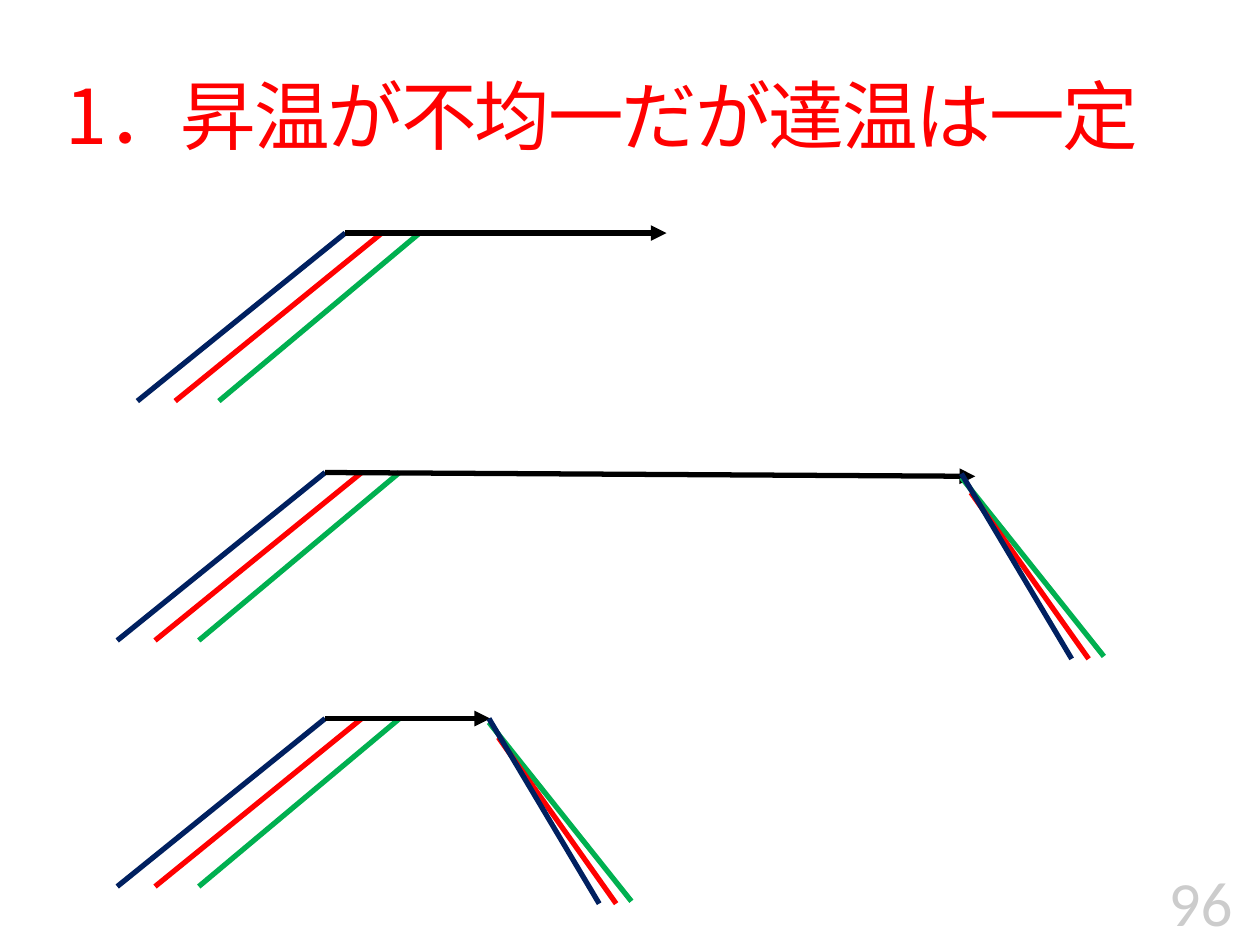
from dataclasses import dataclass

from lxml.etree import SubElement
from pptx import Presentation
from pptx.dml.color import RGBColor as Color
from pptx.enum.shapes import MSO_CONNECTOR as Connector
from pptx.enum.text import MSO_ANCHOR as Anchor, PP_ALIGN as Align
from pptx.oxml.ns import qn
from pptx.util import Pt


@dataclass(frozen=True)
class Theme:
    navy: Color = Color(0x00, 0x20, 0x60)
    red: Color = Color(0xFF, 0x00, 0x00)
    green: Color = Color(0x00, 0xB0, 0x50)
    black: Color = Color(0x00, 0x00, 0x00)
    title_font: str = "Noto Sans CJK JP"
    number_font: str = "Calibri"
    title_size: float = 43.2
    number_size: float = 36
    line_width: float = 3


THEME = Theme()
RISE = 96
APEX = 118.8
HEATING = [(THEME.navy, 0, APEX), (THEME.red, 21.6, 139.7), (THEME.green, 46.6, 161.3)]
COOLING = [
    (THEME.green, (0, 2.2), (81.4, 104.4)),
    (THEME.red, (5.4, 10.8), (72.7, 105.8)),
    (THEME.navy, (0, 0), (63, 105.8)),
]
HOLDS = [
    (78.5, 133.2, 183.6, 0),
    (67, 270, 371.5, 2.2),
    (67, 410.6, 94.3, 0),
]
COOLING_STARTS = [(549.4, 270.7), (279.4, 410.6)]


def add_line(shapes, start, end, color, arrow=False):
    line = shapes.add_connector(Connector.STRAIGHT, *map(Pt, start + end))
    line.line.color.rgb = color
    line.line.width = Pt(THEME.line_width)
    if arrow:
        SubElement(line.line._get_or_add_ln(), qn("a:tailEnd"), type="triangle")
    SubElement(line._element.spPr, qn("a:effectLst"))


def add_heating(page, left, top, length, drop):
    group = page.shapes.add_group_shape()
    for color, bottom_offset, top_offset in HEATING:
        start = (left + bottom_offset, top + RISE)
        add_line(group.shapes, start, (left + top_offset, top), color)
    apex = (left + APEX, top)
    end = (left + APEX + length, top + drop)
    add_line(group.shapes, apex, end, THEME.black, arrow=True)


def add_cooling(page, left, top):
    for color, upper, lower in COOLING:
        start = (left + lower[0], top + lower[1])
        end = (left + upper[0], top + upper[1])
        add_line(page.shapes, start, end, color)


def format_title(title, text):
    title.left, title.top, title.width, title.height = map(Pt, (30.2, 24.5, 659.5, 88.6))
    frame = title.text_frame
    frame.text = text
    frame.word_wrap = True
    frame.vertical_anchor = Anchor.MIDDLE
    para = frame.paragraphs[0]
    para.alignment = Align.LEFT
    para.line_spacing = 0.9
    span = para.runs[0]
    span.font.size = Pt(THEME.title_size)
    span.font.color.rgb = THEME.red
    span.font.name = THEME.title_font
    properties = span._r.get_or_add_rPr()
    properties.set("spc", "-120")
    SubElement(properties, qn("a:ea"), typeface=THEME.title_font)


def add_page_number(page, text):
    box = page.shapes.add_textbox(*map(Pt, (538.6, 429.8, 172.8, 110.2)))
    frame = box.text_frame
    frame.text = text
    frame.word_wrap = True
    frame.vertical_anchor = Anchor.BOTTOM
    para = frame.paragraphs[0]
    para.alignment = Align.RIGHT
    span = para.runs[0]
    span.font.name = THEME.number_font
    span.font.size = Pt(THEME.number_size)
    span.font.color.rgb = THEME.black
    color = span._r.rPr.find(".//" + qn("a:srgbClr"))
    SubElement(color, qn("a:alpha"), val="20000")


def main():
    deck = Presentation()
    deck.slide_width, deck.slide_height = Pt(720), Pt(540)
    page = deck.slides.add_slide(deck.slide_layouts[5])
    format_title(page.shapes.title, "1．昇温が不均一だが達温は一定")
    for hold in HOLDS:
        add_heating(page, *hold)
    for start in COOLING_STARTS:
        add_cooling(page, *start)
    add_page_number(page, "96")
    deck.save("out.pptx")


if __name__ == "__main__":
    main()
